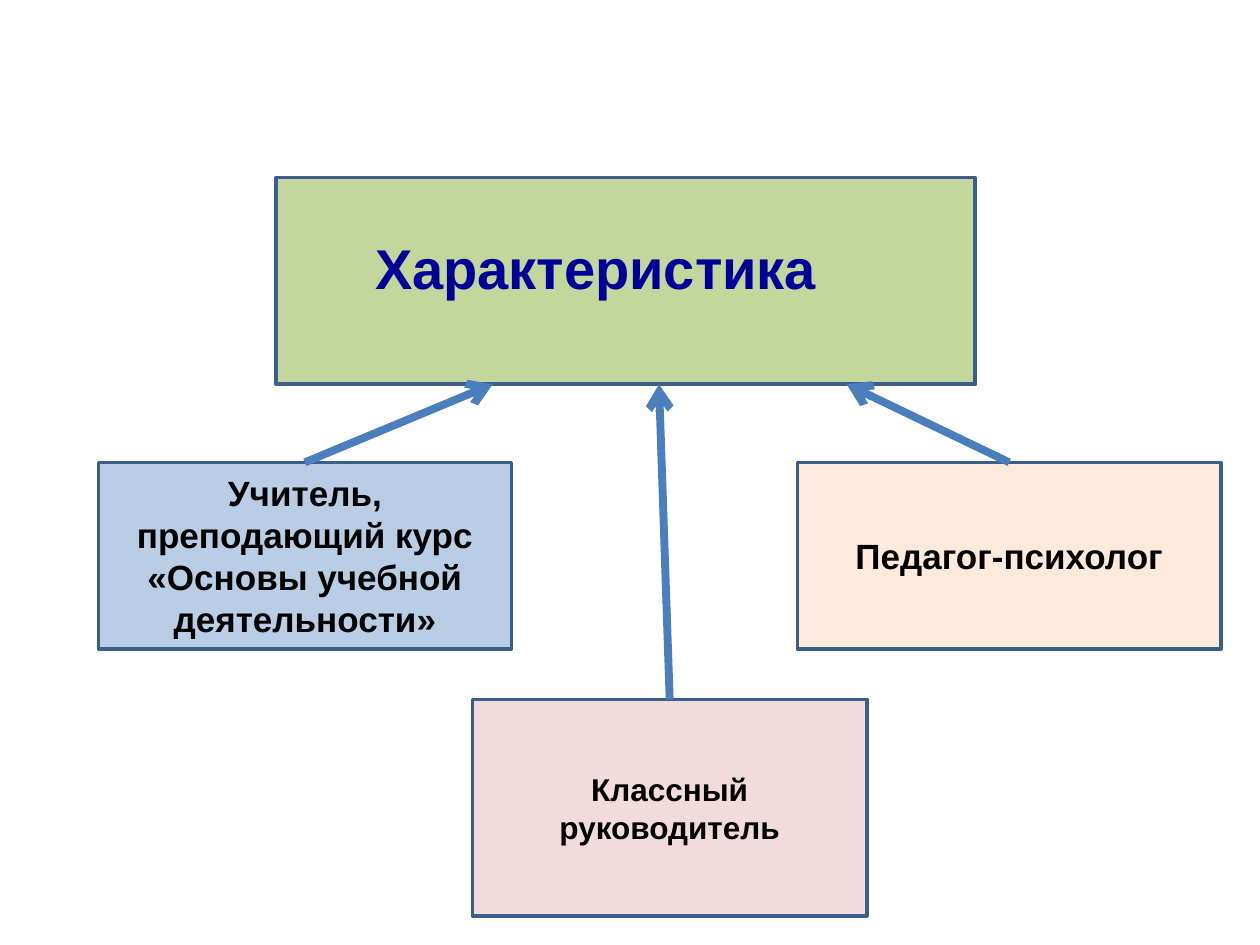
from lxml import etree
from pptx import Presentation
from pptx.dml.color import RGBColor
from pptx.enum.shapes import MSO_CONNECTOR, MSO_SHAPE
from pptx.enum.text import MSO_ANCHOR, MSO_AUTO_SIZE, PP_ALIGN
from pptx.oxml.ns import qn
from pptx.util import Inches, Pt

RECTANGLE = MSO_SHAPE.RECTANGLE
STRAIGHT = MSO_CONNECTOR.STRAIGHT
TOP, MIDDLE = MSO_ANCHOR.TOP, MSO_ANCHOR.MIDDLE
CENTER = PP_ALIGN.CENTER
NO_AUTOFIT = MSO_AUTO_SIZE.NONE

GREEN = RGBColor(0xC3, 0xD6, 0x9B)
BLUE = RGBColor(0xB9, 0xCD, 0xE5)
PINK = RGBColor(0xF2, 0xDC, 0xDB)
PEACH = RGBColor(0xFD, 0xEA, 0xDA)
BORDER = RGBColor(0x3A, 0x5F, 0x8C)
ARROW = RGBColor(0x4B, 0x7E, 0xBC)
NAVY = RGBColor(0x00, 0x00, 0x99)
BLACK = RGBColor(0x00, 0x00, 0x00)

HEADING_PANEL = (2.19, 1.41, 5.55, 1.64)
HEADING_TEXT = (1.72, 1.8, 6.02, 0.64)
PANEL_BOTTOM = HEADING_PANEL[1] + HEADING_PANEL[3]

CONTRIBUTORS = [
    ("Учитель, преподающий курс «Основы учебной деятельности»",
     (0.78, 3.67, 3.28, 1.48), BLUE, 20, 3.91),
    ("Классный руководитель", (3.75, 5.55, 3.13, 1.72), PINK, 18, 5.23),
    ("Педагог-психолог", (6.33, 3.67, 3.36, 1.48), PEACH, 20, 6.72),
]


def write_text(holder, text, size, color=BLACK, anchor=MIDDLE):
    """Write bold centred text into a shape or placeholder."""
    frame = holder.text_frame
    frame.word_wrap = True
    frame.auto_size = NO_AUTOFIT
    frame.vertical_anchor = anchor
    paragraph = frame.paragraphs[0]
    paragraph.alignment = CENTER
    run = paragraph.add_run()
    run.text = text
    run.font.name = "Arial"
    run.font.size = Pt(size)
    run.font.bold = True
    run.font.color.rgb = color


def add_panel(slide, box, fill):
    """Add a bordered rectangle filling the given box."""
    panel = slide.shapes.add_shape(RECTANGLE, *map(Inches, box))
    panel.shadow.inherit = False
    panel.fill.solid()
    panel.fill.fore_color.rgb = fill
    panel.line.color.rgb = BORDER
    panel.line.width = Pt(2)
    return panel


def add_heading(slide, panel_box, text_box):
    """Place the title in front of its coloured panel."""
    panel = add_panel(slide, panel_box, GREEN)
    title = slide.shapes.title
    title.left, title.top, title.width, title.height = map(Inches, text_box)
    write_text(title, "Характеристика", 32, NAVY, TOP)
    title.element.addprevious(panel.element)


def add_contributor(slide, box, text, fill, size):
    """Add one labelled contributor rectangle."""
    contributor = add_panel(slide, box, fill)
    write_text(contributor, text, size)
    return contributor


def add_arrow(slide, contributor, target_x, target_y):
    """Draw an arrow from a contributor's top side to the target point."""
    arrow = slide.shapes.add_connector(
        STRAIGHT, contributor.left, contributor.top,
        Inches(target_x), Inches(target_y))
    arrow.begin_connect(contributor, 0)
    arrow.line.color.rgb = ARROW
    arrow.line.width = Pt(4.5)
    etree.SubElement(arrow.line._get_or_add_ln(), qn("a:tailEnd"), type="arrow")
    etree.SubElement(arrow.element.spPr, qn("a:effectLst"))


def main():
    """Build the slide and save it."""
    presentation = Presentation()
    presentation.slide_width = Inches(10)
    presentation.slide_height = Inches(7.5)
    slide = presentation.slides.add_slide(presentation.slide_layouts[5])
    add_heading(slide, HEADING_PANEL, HEADING_TEXT)
    contributors = [add_contributor(slide, box, text, fill, size)
                    for text, box, fill, size, _ in CONTRIBUTORS]
    for contributor, (*_, target_x) in zip(contributors, CONTRIBUTORS):
        add_arrow(slide, contributor, target_x, PANEL_BOTTOM)
    presentation.save("out.pptx")


if __name__ == "__main__":
    main()
